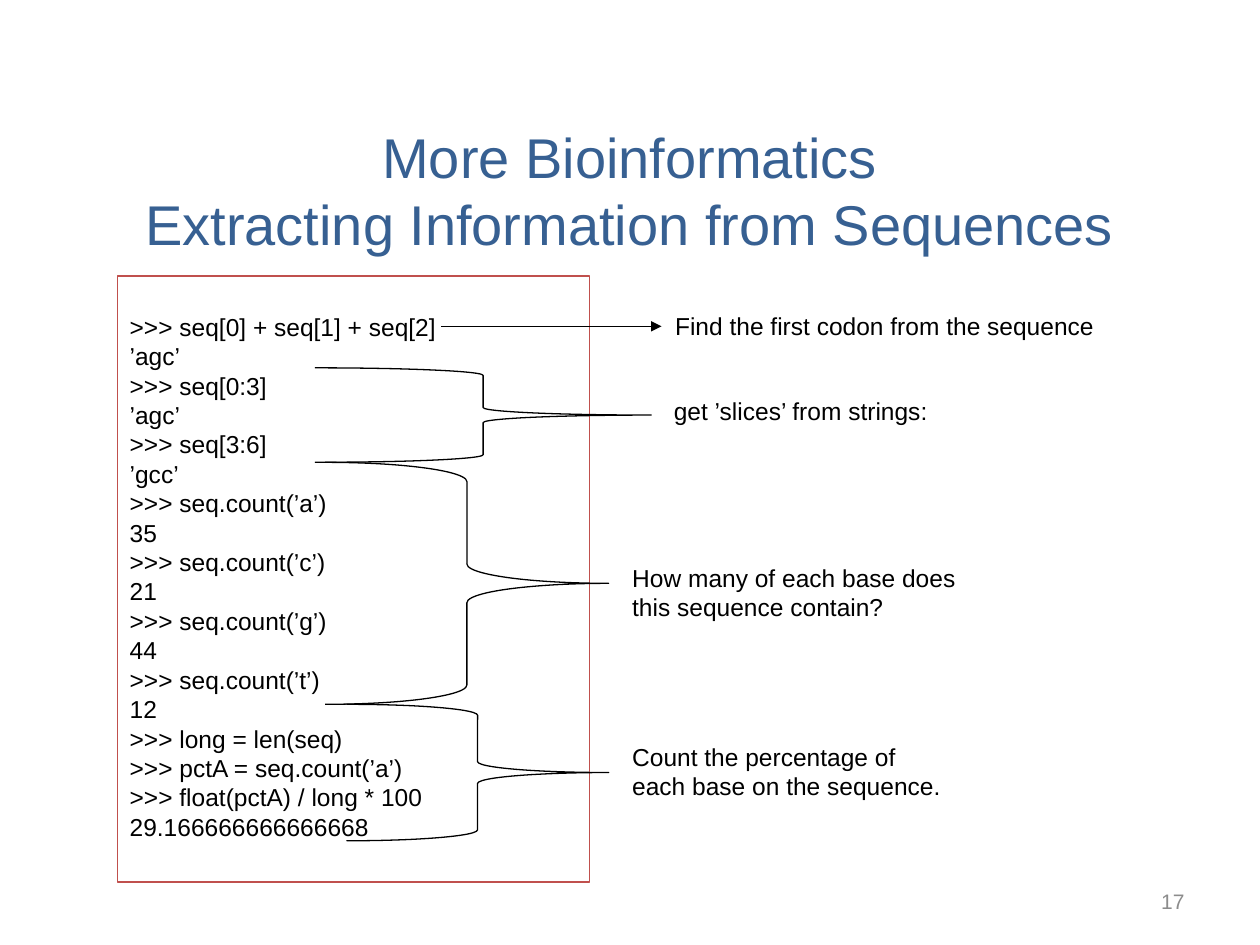
from dataclasses import dataclass
from typing import Any

from lxml.etree import SubElement
from pptx import Presentation
from pptx.dml.color import RGBColor
from pptx.enum.shapes import MSO_CONNECTOR, MSO_SHAPE
from pptx.enum.text import MSO_ANCHOR as Anchor, MSO_AUTO_SIZE as AutoSize, PP_ALIGN as Align
from pptx.oxml.ns import qn
from pptx.util import Pt

TITLE = "More Bioinformatics\vExtracting Information from Sequences"
SESSION = """>>> seq[0] + seq[1] + seq[2]
’agc’
>>> seq[0:3]
’agc’
>>> seq[3:6]
’gcc’
>>> seq.count(’a’)
35
>>> seq.count(’c’)
21
>>> seq.count(’g’)
44
>>> seq.count(’t’)
12
>>> long = len(seq)
>>> pctA = seq.count(’a’)
>>> float(pctA) / long * 100
29.166666666666668"""

# text, left, top, width, height
NOTES = [
    ("Find the first codon from the sequence", 378.7, 174.2, 254.9, 24.5),
    ("get ’slices’ from strings:", 378, 222.5, 160.6, 24.5),
    ("How many of each base does\nthis sequence contain?", 354.2, 318.2, 204.5, 41),
    ("Count the percentage of\neach base on the sequence.", 354.2, 420.5, 191.5, 41),
]

# left, top, width, height
BRACES = [
    (198, 402.5, 149.8, 78),
    (185.8, 264.2, 162, 138.3),
    (180, 210.2, 192.2, 54),
]


def color(hex_text):
    return RGBColor.from_string(hex_text)


def write(frame, text, *, font="Arial", size=14, ink="000000", align=Align.LEFT,
          anchor=Anchor.TOP, wrap=True, inset_top=3.6):
    frame.text = text
    frame.auto_size = AutoSize.NONE
    frame.word_wrap = wrap
    frame.vertical_anchor = anchor
    frame.margin_left = frame.margin_right = Pt(7.2)
    frame.margin_top, frame.margin_bottom = Pt(inset_top), Pt(3.6)
    for paragraph in frame.paragraphs:
        paragraph.alignment = align
        paragraph.line_spacing = Pt(size * 1.2)
        for run in paragraph.runs:
            run.font.name = font
            run.font.size = Pt(size)
            run.font.color.rgb = color(ink)


@dataclass
class Deck:
    slide: Any
    ink: str = "000000"
    accent: str = "C0504D"
    heading: str = "376092"
    muted: str = "8C8C8C"
    line_width: float = 0.75

    def title(self, text, left, top, width, height):
        title = self.slide.shapes.title
        title.left, title.top = Pt(left), Pt(top)
        title.width, title.height = Pt(width), Pt(height)
        write(title.text_frame, text, size=32, ink=self.heading, align=Align.CENTER)

    def text(self, text, left, top, width, height, **style):
        box = self.slide.shapes.add_textbox(Pt(left), Pt(top), Pt(width), Pt(height))
        write(box.text_frame, text, **style)

    def outline(self, preset, left, top, width, height, line):
        shape = self.slide.shapes.add_shape(preset, Pt(left), Pt(top), Pt(width), Pt(height))
        shape.shadow.inherit = False
        shape.fill.background()
        shape.line.color.rgb = color(line)
        shape.line.width = Pt(self.line_width)
        return shape

    def code(self, text, left, top, width, height):
        box = self.outline(MSO_SHAPE.RECTANGLE, left, top, width, height, self.accent)
        write(box.text_frame, text, ink=self.ink, inset_top=20.4)

    def brace(self, left, top, width, height):
        brace = self.outline(MSO_SHAPE.RIGHT_BRACE, left, top, width, height, self.ink)
        brace.adjustments[0] = 0.08
        brace.adjustments[1] = 0.5

    def arrow(self, x1, y1, x2, y2):
        arrow = self.slide.shapes.add_connector(
            MSO_CONNECTOR.STRAIGHT, Pt(x1), Pt(y1), Pt(x2), Pt(y2))
        arrow.line.color.rgb = color(self.ink)
        arrow.line.width = Pt(self.line_width)
        SubElement(arrow.line._get_or_add_ln(), qn("a:tailEnd"), type="triangle")
        SubElement(arrow._element.spPr, qn("a:effectLst"))


def main():
    presentation = Presentation()
    presentation.slide_width, presentation.slide_height = Pt(720), Pt(540)
    deck = Deck(presentation.slides.add_slide(presentation.slide_layouts[5]))

    deck.title(TITLE, 36, 66.2, 648, 69.8)
    deck.text("17", 516.2, 500.4, 167.8, 28.8, size=12, ink=deck.muted,
              align=Align.RIGHT, anchor=Anchor.MIDDLE)
    deck.code(SESSION, 67, 157.7, 270, 346.3)
    for note, *place in NOTES:
        deck.text(note, *place, wrap=False)
    for place in BRACES:
        deck.brace(*place)
    deck.arrow(252, 186.5, 378, 186.5)

    presentation.save("out.pptx")


if __name__ == "__main__":
    main()
